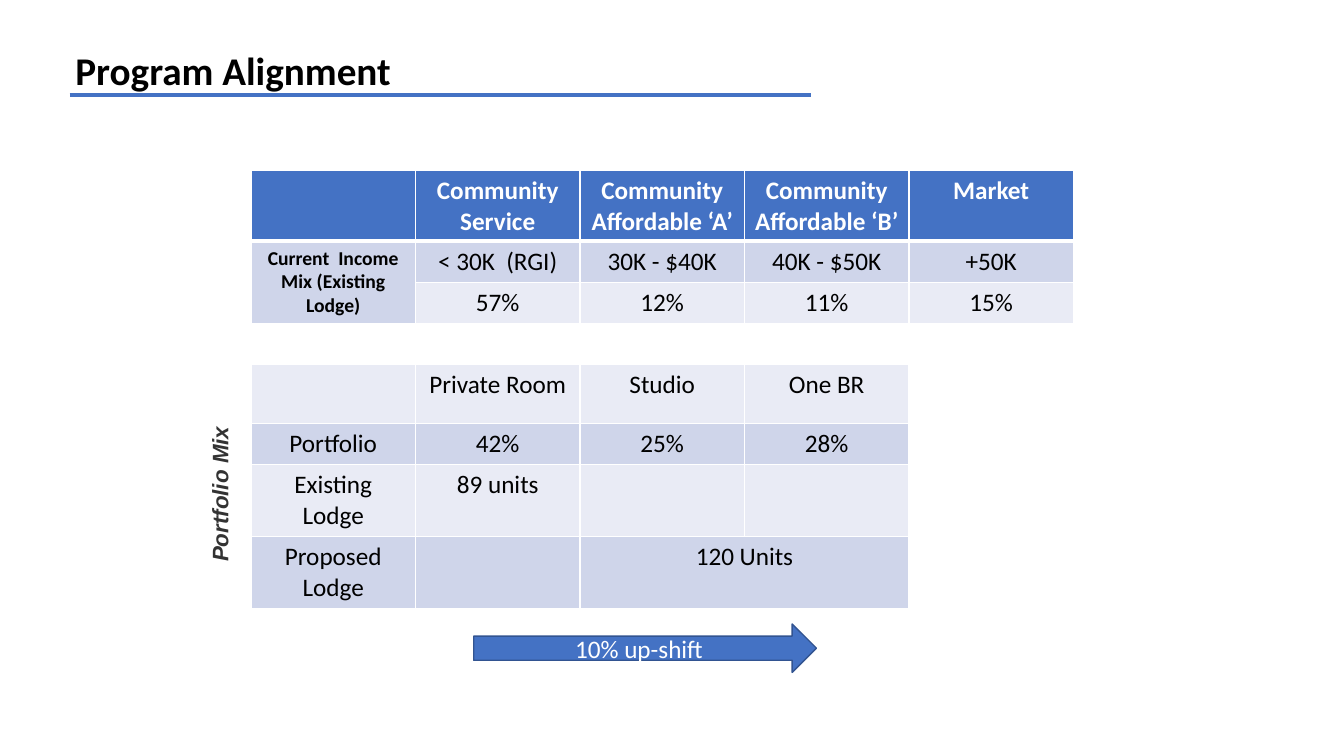
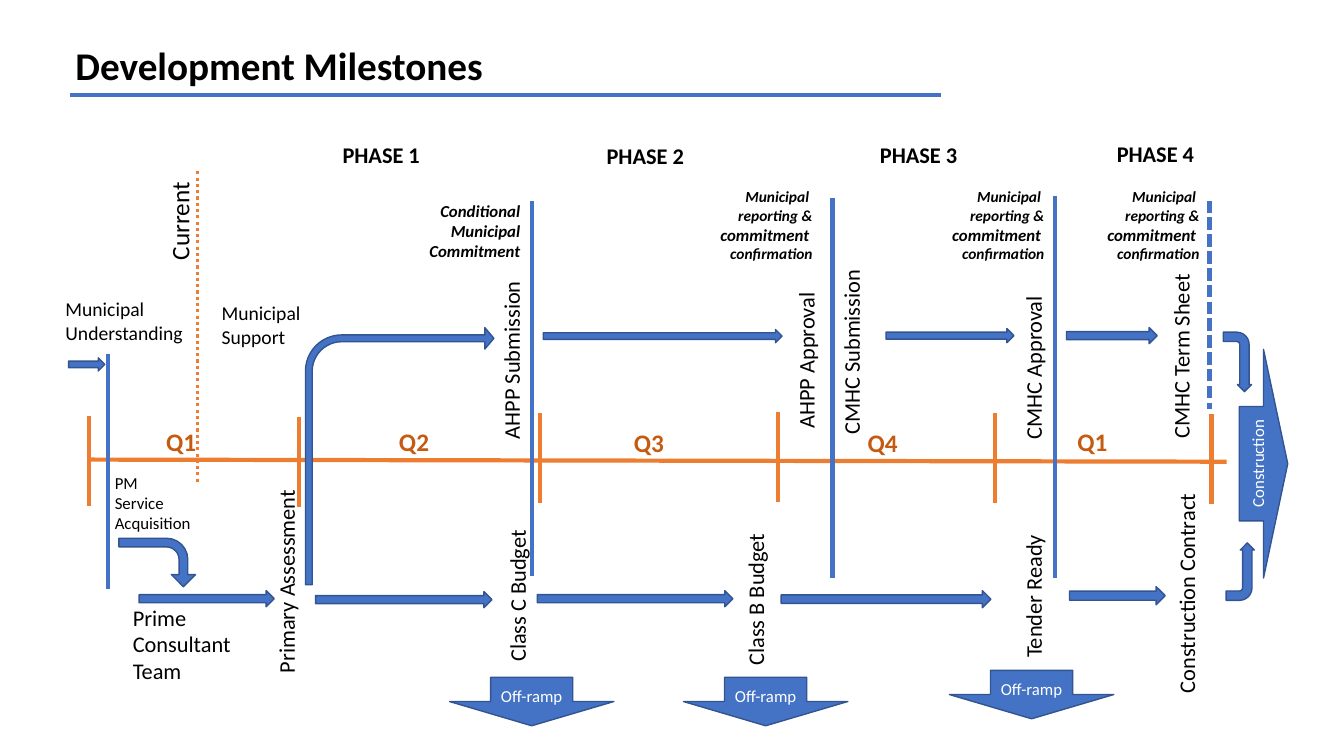
from dataclasses import dataclass
from typing import Optional, Union

from lxml.etree import SubElement
from pptx import Presentation
from pptx.dml.color import RGBColor
from pptx.enum.dml import MSO_LINE_DASH_STYLE as Dash
from pptx.enum.shapes import MSO_CONNECTOR, MSO_SHAPE as Preset
from pptx.enum.text import MSO_AUTO_SIZE, PP_ALIGN as Align
from pptx.oxml.ns import qn
from pptx.util import Pt

COLORS = {
    "blue": "4472C4",
    "outline": "325491",
    "orange": "ED7D31",
    "quarter": "C55A11",
    "band": "CFD5EA",
    "pale": "E9EBF5",
    "black": "000000",
    "white": "FFFFFF",
    "grey": "333333",
}


@dataclass(frozen=True)
class Run:
    text: str
    size: float


Paragraph = Union[str, tuple[Run, ...]]


@dataclass(frozen=True)
class Label:
    left: float
    top: float
    width: float
    height: float
    paragraphs: tuple[Paragraph, ...]
    size: float = 16
    wrap: bool = False


@dataclass(frozen=True)
class Arrow:
    left: float
    top: float
    width: float
    height: float
    preset: Preset = Preset.RIGHT_ARROW
    text: str = ""
    size: float = 12
    rotation: float = 0
    flipped: bool = False
    adjustments: tuple[float, ...] = ()


@dataclass(frozen=True)
class Rule:
    start: tuple[float, float]
    end: tuple[float, float]
    color: str = "blue"
    weight: float = 3
    dash: Optional[Dash] = None


def rgb(name: str) -> RGBColor:
    return RGBColor.from_string(COLORS[name])


def write(frame, *paragraphs: Paragraph, size: float = 18, color: str = "black",
          bold: bool = False, italic: bool = False, font: str = "Calibri",
          align: Align = Align.LEFT) -> None:
    """Fill a text frame, one paragraph for each string or tuple of runs."""
    for index, content in enumerate(paragraphs):
        paragraph = frame.add_paragraph() if index else frame.paragraphs[0]
        paragraph.alignment = align
        parts = (Run(content, size),) if isinstance(content, str) else content
        for part in parts:
            run = paragraph.add_run()
            run.text = part.text
            run.font.name = font
            run.font.size = Pt(part.size)
            run.font.bold = bold
            run.font.italic = italic
            run.font.color.rgb = rgb(color)


def add_label(slide, label: Label, rotation: float = 0, **text_format) -> None:
    box = slide.shapes.add_textbox(Pt(label.left), Pt(label.top),
                                   Pt(label.width), Pt(label.height))
    box.rotation = rotation
    box.text_frame.word_wrap = label.wrap
    box.text_frame.auto_size = MSO_AUTO_SIZE.SHAPE_TO_FIT_TEXT
    write(box.text_frame, *label.paragraphs, size=label.size, **text_format)


def add_rule(slide, rule: Rule) -> None:
    line = slide.shapes.add_connector(MSO_CONNECTOR.STRAIGHT,
                                      *map(Pt, rule.start + rule.end))
    line.line.color.rgb = rgb(rule.color)
    line.line.width = Pt(rule.weight)
    if rule.dash:
        line.line.dash_style = rule.dash
    SubElement(line._element.spPr, qn("a:effectLst"))


def add_arrow(slide, arrow: Arrow) -> None:
    shape = slide.shapes.add_shape(arrow.preset, Pt(arrow.left), Pt(arrow.top),
                                   Pt(arrow.width), Pt(arrow.height))
    for index, value in enumerate(arrow.adjustments):
        shape.adjustments[index] = value
    shape.rotation = arrow.rotation
    if arrow.flipped:
        shape._element.spPr.find(qn("a:xfrm")).set("flipH", "1")
    shape.shadow.inherit = False
    shape.fill.solid()
    shape.fill.fore_color.rgb = rgb("blue")
    shape.line.color.rgb = rgb("outline")
    shape.line.width = Pt(1)
    if arrow.text:
        write(shape.text_frame, arrow.text, size=arrow.size, color="white",
              align=Align.CENTER)


def add_titled_slide(deck, title: str, title_top: float, underline_end: float):
    slide = deck.slides.add_slide(deck.slide_layouts[6])
    add_label(slide, Label(46.8, title_top, 695.5, 41, (title,), 28, True), bold=True)
    add_rule(slide, Rule((49.7, 67.7), (underline_end, 67.7)))
    return slide


def style_cell(cell, fill: str, bottom: float) -> None:
    """Give a cell white borders and a solid fill."""
    properties = cell._tc.get_or_add_tcPr()
    for side, weight in (("L", 1), ("R", 1), ("T", 1), ("B", bottom)):
        border = SubElement(properties, qn(f"a:ln{side}"), w=str(Pt(weight)))
        paint = SubElement(border, qn("a:solidFill"))
        SubElement(paint, qn("a:srgbClr"), val=COLORS["white"])
    cell.fill.solid()
    cell.fill.fore_color.rgb = rgb(fill)


MIX_ROWS = (
    ("", "Community Service", "Community Affordable ‘A’", "Community Affordable ‘B’", "Market"),
    ("Current  Income Mix (Existing Lodge)", "< 30K  (RGI)", "30K - $40K", "40K - $50K", "+50K"),
    ("", "57%", "12%", "11%", "15%"),
    ("", "", "", "", ""),
    ("", "Private Room", "Studio", "One BR", ""),
    ("Portfolio", "42%", "25%", "28%", ""),
    ("Existing Lodge", "89 units", "", "", ""),
    ("Proposed Lodge", "", "120 Units", "", ""),
)
ROW_HEIGHTS = (50.7, 29.3, 29.3, 29.3, 42.3, 29.3, 51.4, 51.4)
ROW_FILLS = ("blue", "band", "pale", "white", "pale", "band", "pale", "band")
COLUMN_WIDTH = 117.5
SPACER_ROW = 3


def add_mix_table(slide) -> None:
    columns = len(MIX_ROWS[0])
    table = slide.shapes.add_table(len(MIX_ROWS), columns, Pt(179.3), Pt(121.7),
                                   Pt(COLUMN_WIDTH * columns), Pt(sum(ROW_HEIGHTS))).table
    for column in table.columns:
        column.width = Pt(COLUMN_WIDTH)
    for r, (texts, height, fill) in enumerate(zip(MIX_ROWS, ROW_HEIGHTS, ROW_FILLS)):
        table.rows[r].height = Pt(height)
        for c, text in enumerate(texts):
            cell = table.cell(r, c)
            outside = r > SPACER_ROW and c == columns - 1
            style_cell(cell, "white" if outside else fill, 1 if r else 3)
            if text:
                income_heading = (r, c) == (1, 0)
                write(cell.text_frame, text, size=14 if income_heading else 18,
                      bold=r == 0 or income_heading,
                      color="black" if r else "white", align=Align.CENTER)
    table.cell(1, 0).merge(table.cell(2, 0))
    table.cell(7, 2).merge(table.cell(7, 3))


def build_alignment(deck) -> None:
    slide = add_titled_slide(deck, "Program Alignment", 29.5, 579.6)
    add_mix_table(slide)
    add_arrow(slide, Arrow(338.4, 445.7, 244.8, 34.6, text="10% up-shift", size=18))
    add_label(slide, Label(82.8, 339.8, 148.3, 26.6, ("Portfolio Mix",), wrap=True),
              rotation=270, font="Arial", color="grey", bold=True, italic=True,
              align=Align.CENTER)


TICK_HEIGHT = 64
QUARTER_TICKS = ((63.4, 297.4), (213.8, 297.8), (385.9, 295.2),
                 (555.8, 294.5), (710.6, 295.2), (865.4, 295.9))
MILESTONE_RULES = (
    Rule((77, 252.7), (77, 420.5)),
    Rule((380.2, 143.3), (380.2, 411.1)),
    Rule((594.7, 141.1), (594.7, 412.6)),
    Rule((753.8, 139.7), (753.8, 412.6)),
    Rule((864, 143.3), (864, 292.3), dash=Dash.SQUARE_DOT),
    Rule((141.1, 122.4), (141.1, 344.2), "orange", 2.25, Dash.ROUND_DOT),
)
QUARTERS = (("Q1", 111.6, 301), ("Q2", 277.9, 301), ("Q3", 445.7, 301.7),
            ("Q4", 612.7, 301.7), ("Q1", 762.5, 301))
PHASES = ((237.6, 97.2), (426.2, 97.9), (621.4, 97.2), (790.6, 96.5))
STEPS = (
    Label(298.8, 245.5, 128.2, 22.3, ("AHPP Submission",)),
    Label(517, 245.5, 113, 22.3, ("AHPP Approval",)),
    Label(539.3, 239.8, 133.2, 22.3, ("CMHC Submission",)),
    Label(676.8, 250.6, 118.1, 22.3, ("CMHC Approval",)),
    Label(776.9, 240.5, 133.2, 26.6, ("CMHC Term Sheet",)),
    Label(120.2, 394.6, 164.2, 22.3, ("Primary Assessment",), wrap=True),
    Label(312.5, 414, 109.4, 22.3, ("Class C Budget",)),
    Label(482.4, 416.2, 110.2, 22.3, ("Class B Budget",)),
    Label(684, 414, 103.7, 22.3, ("Tender Ready",)),
    Label(766.1, 411.8, 158.4, 22.3, ("Construction Contract",)),
    Label(92.9, 143.3, 70.6, 28.8, ("Current",), 18),
)
EARLY_WORK = (
    Label(39.6, 208.8, 99.4, 41, ("Municipal", "Understanding"), 14),
    Label(151.2, 211.7, 74.9, 41, ("Municipal", "Support"), 14),
    Label(74.9, 334.1, 97.2, 51.1, ("PM", "Service Acquisition"), 12, True),
    Label(87.8, 427.7, 96.5, 65.5, ("Prime Consultant Team",), 16, True),
)
CONFIRMATION = ("Municipal ", "reporting &", (Run("commitment", 12), Run(" ", 11)),
                "confirmation")
COMMITMENTS = (
    Label(298.8, 139.7, 79.9, 51.1, ("Conditional", "Municipal", "Commitment"), 12),
    *(Label(left, 130.3, 81.4, 61.9, CONFIRMATION, 11) for left in (506.2, 671.8, 782.6)),
)
HOOK = (0.331, 0.25, 0.25, 0.438)
ARROWS = (
    Arrow(49, 255.6, 25.9, 9.4),
    Arrow(388.1, 235.4, 170.6, 9.4),
    Arrow(632.9, 234.7, 91.4, 10.1),
    Arrow(761.8, 234, 64.8, 11.5),
    Arrow(99.4, 421.9, 96.5, 11.5),
    Arrow(225.4, 422.6, 126, 11.5),
    Arrow(383.8, 421.9, 139.7, 11.5),
    Arrow(558, 421.9, 149.8, 12.2),
    Arrow(763.9, 419, 68.4, 13),
    Arrow(95, 374.4, 34.6, 54.7, Preset.BENT_ARROW, rotation=90,
          adjustments=(0.18, 0.25, 0.25, 0.438)),
    Arrow(218.2, 234, 134.6, 183.6, Preset.BENT_ARROW,
          adjustments=(0.036, 0.057, 0.048, 0.192)),
    Arrow(865.4, 398.2, 41, 20.2, Preset.BENT_ARROW, rotation=90, flipped=True,
          adjustments=HOOK),
    *(Arrow(left, top, 117.4, 34.6, Preset.DOWN_ARROW, "Off-ramp")
      for left, top in ((321.1, 483.8), (488.2, 483.8), (678.2, 478.8))),
    Arrow(820.8, 313.9, 163.4, 34.6, Preset.DOWN_ARROW, "Construction", rotation=270),
    Arrow(862.6, 248.4, 42.5, 20.2, Preset.BENT_ARROW, rotation=90, adjustments=HOOK),
)


def build_milestones(deck) -> None:
    slide = add_titled_slide(deck, "Development Milestones", 25.9, 672.5)
    add_rule(slide, Rule((63.4, 328.3), (876.2, 329.8), "orange"))
    for x, top in QUARTER_TICKS:
        add_rule(slide, Rule((x, top), (x, top + TICK_HEIGHT), "orange"))
    for rule in MILESTONE_RULES:
        add_rule(slide, rule)
    for arrow in ARROWS:
        add_arrow(slide, arrow)
    for quarter, left, top in QUARTERS:
        add_label(slide, Label(left, top, 37.4, 28.8, (quarter,), 18, True),
                  color="quarter", bold=True)
    for number, (left, top) in enumerate(PHASES, 1):
        add_label(slide, Label(left, top, 77.8, 26.6, (f"PHASE {number}",), wrap=True),
                  bold=True)
    for step in STEPS:
        add_label(slide, step, rotation=270)
    for work in EARLY_WORK:
        add_label(slide, work)
    for commitment in COMMITMENTS:
        add_label(slide, commitment, bold=True, italic=True, align=Align.RIGHT)


def main() -> None:
    deck = Presentation()
    deck.slide_width, deck.slide_height = Pt(960), Pt(540)
    build_alignment(deck)
    build_milestones(deck)
    deck.save("out.pptx")


if __name__ == "__main__":
    main()
